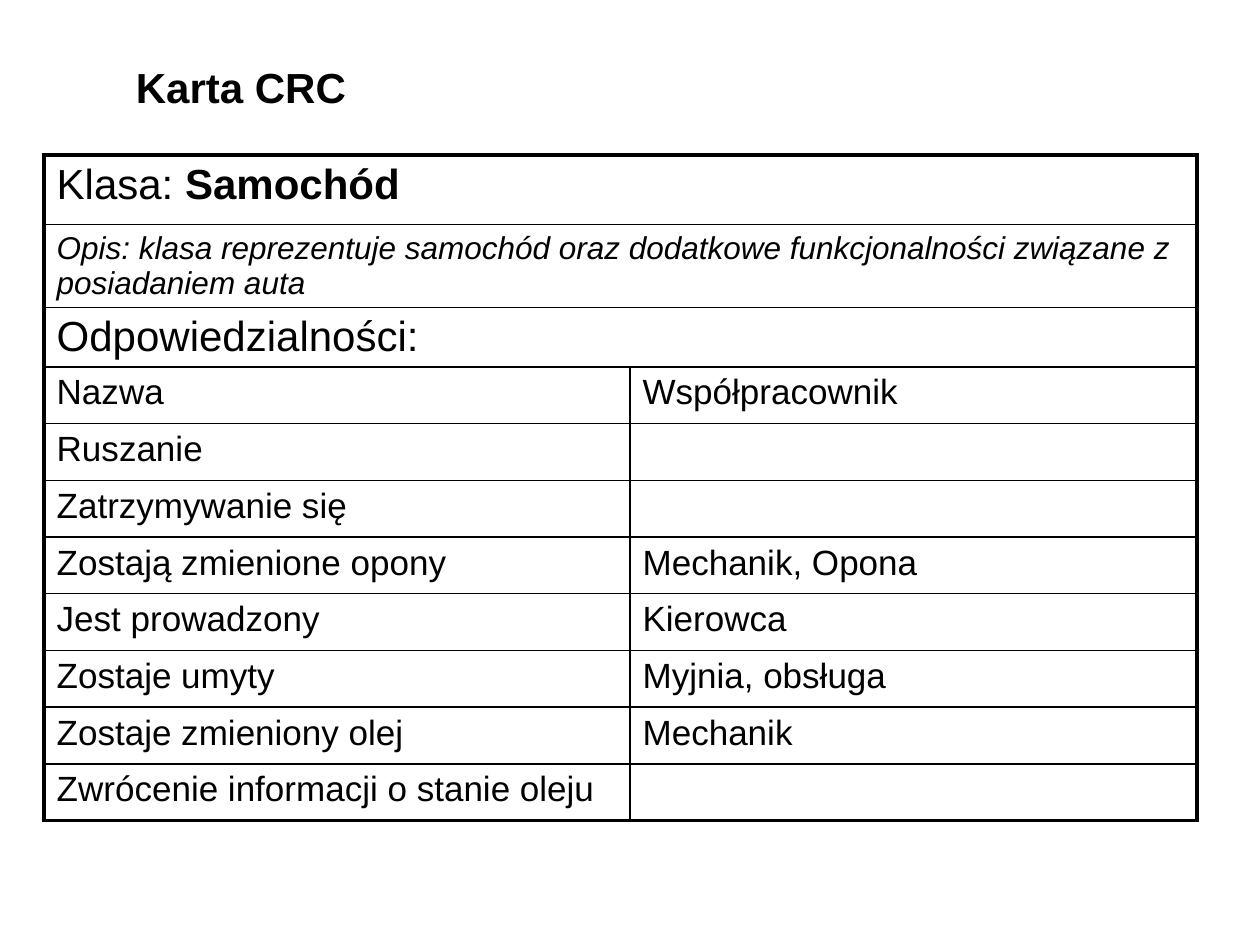
from lxml import etree
from pptx import Presentation
from pptx.dml.color import RGBColor
from pptx.oxml.ns import qn
from pptx.util import Inches, Pt

FONT = "Arial"
BLACK = "000000"
THIN, THICK = 1, 2.25


def color(value):
    return RGBColor.from_string(value)


class CardPage:
    """Holds the style and the slide being filled."""

    def __init__(self, page):
        self.page = page

    def add_span(self, para, text, size, bold=False, italic=False):
        span = para.add_run()
        span.text = text
        font = span.font
        font.name, font.size = FONT, Pt(size)
        font.bold, font.italic = bold, italic
        font.color.rgb = color(BLACK)

    def add_title(self, text, left, top, width, height):
        box = self.page.shapes.add_textbox(
            Inches(left), Inches(top), Inches(width), Inches(height))
        box.text_frame.word_wrap = True
        self.add_span(box.text_frame.paragraphs[0], text, 24, bold=True)

    def set_borders(self, cell, widths):
        properties = cell._tc.get_or_add_tcPr()
        for side, width in zip("LRTB", widths):
            line = etree.SubElement(properties, qn(f"a:ln{side}"), w=str(Pt(width)))
            fill = etree.SubElement(line, qn("a:solidFill"))
            etree.SubElement(fill, qn("a:srgbClr"), val=BLACK)

    def add_table(self, rows, left, top, column_widths, row_heights):
        frame = self.page.shapes.add_table(
            len(rows), len(column_widths), Inches(left), Inches(top),
            Inches(sum(column_widths)), Inches(sum(row_heights)))
        table = frame.table
        table.first_row = table.horz_banding = False
        for column, width in zip(table.columns, column_widths):
            column.width = Inches(width)
        last_row, last_column = len(rows) - 1, len(column_widths) - 1
        for r, (cells, height) in enumerate(zip(rows, row_heights)):
            table.rows[r].height = Inches(height)
            merged = len(cells) == 1
            if merged:
                table.cell(r, 0).merge(table.cell(r, last_column))
            for c, spans in enumerate(cells):
                cell = table.cell(r, c)
                for span in spans:
                    self.add_span(cell.text_frame.paragraphs[0], *span)
                # The outer frame is thick, the inner grid thin
                outer = (c == 0, merged or c == last_column, r == 0, r == last_row)
                self.set_borders(cell, [THICK if edge else THIN for edge in outer])
                cell.fill.background()


# Card content: a row with one cell spans the table
HEADER = [
    [[("Klasa: ", 24), ("Samochód", 24, True)]],
    [[("Opis: klasa reprezentuje samochód oraz dodatkowe funkcjonalności "
       "związane z posiadaniem auta", 18, False, True)]],
    [[("Odpowiedzialności:", 24)]],
]
RESPONSIBILITIES = [
    ("Nazwa", "Współpracownik"),
    ("Ruszanie", ""),
    ("Zatrzymywanie się", ""),
    ("Zostają zmienione opony", "Mechanik, Opona"),
    ("Jest prowadzony", "Kierowca"),
    ("Zostaje umyty", "Myjnia, obsługa"),
    ("Zostaje zmieniony olej", "Mechanik"),
    ("Zwrócenie informacji o stanie oleju", ""),
]


def main():
    deck = Presentation()
    deck.slide_width, deck.slide_height = Inches(10), Inches(7.5)
    card = CardPage(deck.slides.add_slide(deck.slide_layouts[6]))

    # Class card
    body = [[[(text, 20)] if text else [] for text in pair]
            for pair in RESPONSIBILITIES]
    heights = [0.55, 0.66, 0.47] + [0.45] * len(body)
    card.add_table(HEADER + body, 0.35, 1.23, [4.65, 4.5], heights)

    # Title
    card.add_title("Karta CRC", 0.98, 0.44, 2.99, 0.5)

    deck.save("out.pptx")


if __name__ == "__main__":
    main()
